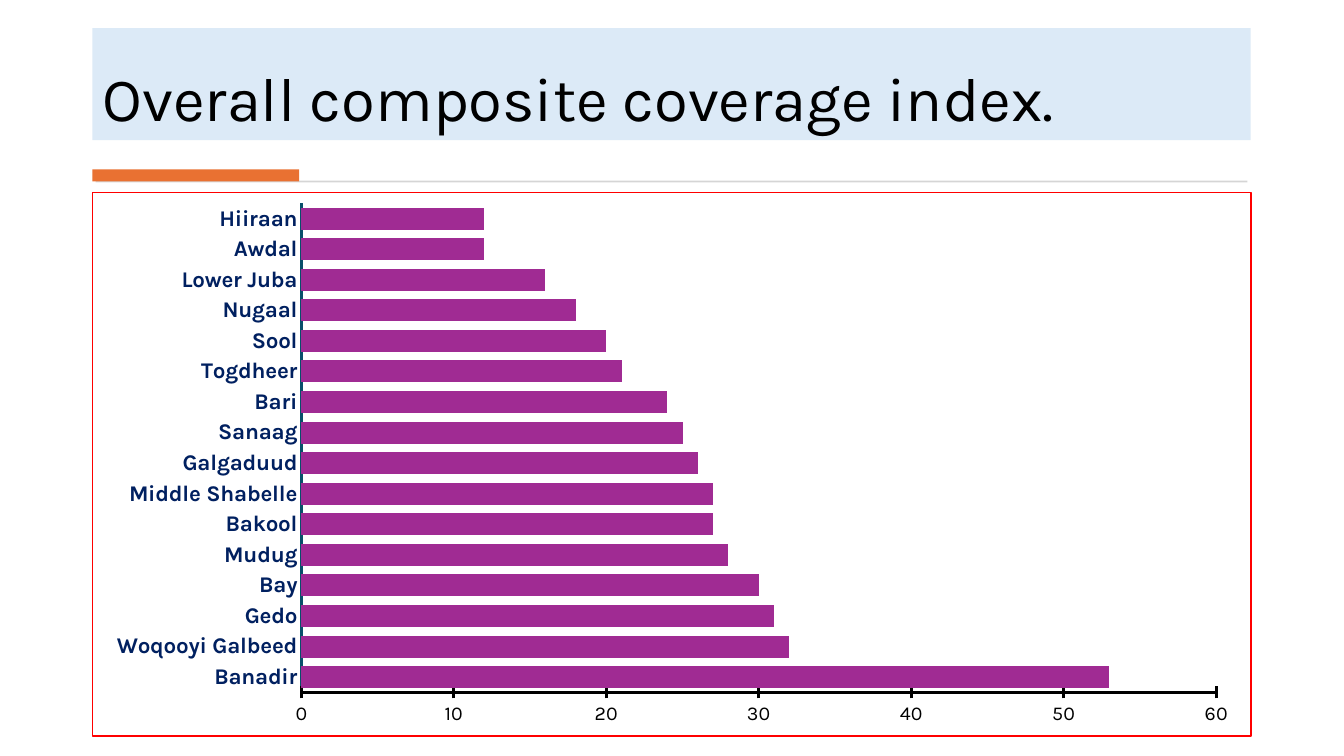
from dataclasses import dataclass

from lxml.etree import SubElement
from pptx import Presentation
from pptx.chart.data import CategoryChartData
from pptx.dml.color import RGBColor
from pptx.enum.chart import XL_CHART_TYPE, XL_TICK_MARK
from pptx.enum.shapes import MSO_SHAPE
from pptx.enum.text import MSO_ANCHOR, PP_ALIGN
from pptx.oxml import parse_xml
from pptx.oxml.ns import nsdecls, qn
from pptx.util import Cm, Pt

TITLE = "Overall composite coverage index."
COVERAGE = [
    ("Banadir", 53), ("Woqooyi Galbeed", 32), ("Gedo", 31), ("Bay", 30),
    ("Mudug", 28), ("Bakool", 27), ("Middle Shabelle", 27), ("Galgaduud", 26),
    ("Sanaag", 25), ("Bari", 24), ("Togdheer", 21), ("Sool", 20),
    ("Nugaal", 18), ("Lower Juba", 16), ("Awdal", 12), ("Hiiraan", 12),
]
AXIS_MAX, AXIS_STEP = 60, 10


@dataclass(frozen=True)
class Theme:
    font: str = "Karla"
    black: str = "000000"
    title_band: str = "DCEAF7"
    rule: str = "D5D5D5"
    accent: str = "E97132"
    bar: str = "A02B93"
    region: str = "002060"
    region_line: str = "084F6A"
    frame_fill: str = "FFFFFF"
    frame_line: str = "FF0000"
    title_size: int = 44
    region_size: int = 16
    scale_size: int = 14
    base_size: int = 10


THEME = Theme()
LEFT = 2.33
BOXES = {  # left, top, width, height in cm
    "title": (LEFT, 0.71, 29.19, 2.82),
    "rule": (2.41, 4.55, 29.03, 0.05),
    "accent": (LEFT, 4.27, 5.21, 0.3),
    "chart": (LEFT, 4.84, 29.21, 13.72),
}
PLOT = {"x": 0.18, "y": 0.02, "w": 0.79, "h": 0.9}  # shares of the chart


def box(part):
    return [Cm(length) for length in BOXES[part]]


def paint(fill, color):
    fill.solid()
    fill.fore_color.rgb = RGBColor.from_string(color)


def style_font(font, size, color, bold=False):
    font.name, font.size, font.bold = THEME.font, Pt(size), bold
    font.color.rgb = RGBColor.from_string(color)


def style_axis(axis, size, color, line_color, tick, bold=False):
    axis.has_major_gridlines = False
    axis.major_tick_mark, axis.minor_tick_mark = tick, XL_TICK_MARK.NONE
    style_font(axis.tick_labels.font, size, color, bold)
    axis.format.line.width = Pt(2)
    axis.format.line.color.rgb = RGBColor.from_string(line_color)


def add_title(slide):
    title = slide.shapes.title
    title.left, title.top, title.width, title.height = box("title")
    paint(title.fill, THEME.title_band)
    title.text_frame.vertical_anchor = MSO_ANCHOR.BOTTOM
    paragraph = title.text_frame.paragraphs[0]
    paragraph.alignment, paragraph.line_spacing = PP_ALIGN.LEFT, 0.9
    run = paragraph.add_run()
    run.text = TITLE
    style_font(run.font, THEME.title_size, THEME.black)


def add_strip(slide, part, color):
    strip = slide.shapes.add_shape(MSO_SHAPE.RECTANGLE, *box(part))
    strip.shadow.inherit = False
    paint(strip.fill, color)
    strip.line.fill.background()


def frame_chart(chart):
    """Fill and outline the chart area and fix the place of its plot."""
    chart_space = chart.element
    chart_space.find(qn("c:chart")).addnext(parse_xml(
        f'<c:spPr {nsdecls("c", "a")}>'
        f'<a:solidFill><a:srgbClr val="{THEME.frame_fill}"/></a:solidFill>'
        f'<a:ln w="{Pt(0.75)}"><a:solidFill><a:srgbClr val="{THEME.frame_line}"/>'
        '</a:solidFill></a:ln></c:spPr>'))
    plot_area = chart_space.find(".//" + qn("c:plotArea"))
    for layout in plot_area.findall(qn("c:layout")):
        plot_area.remove(layout)
    layout = parse_xml(f'<c:layout {nsdecls("c")}/>')
    plot_area.insert(0, layout)
    manual = SubElement(layout, qn("c:manualLayout"))
    settings = {"layoutTarget": "inner", "xMode": "edge", "yMode": "edge", **PLOT}
    for tag, value in settings.items():
        SubElement(manual, qn(f"c:{tag}")).set("val", str(value))


def add_coverage_chart(slide):
    coverage = CategoryChartData(number_format="0")
    regions, values = zip(*COVERAGE)
    coverage.categories = regions
    coverage.add_series("Series 1", values)
    chart = slide.shapes.add_chart(
        XL_CHART_TYPE.BAR_CLUSTERED, *box("chart"), coverage).chart
    chart.has_title = chart.has_legend = False
    style_font(chart.font, THEME.base_size, THEME.black)

    plot = chart.plots[0]
    plot.gap_width, plot.overlap, plot.vary_by_categories = 39, 98, False
    paint(plot.series[0].format.fill, THEME.bar)

    style_axis(chart.category_axis, THEME.region_size, THEME.region,
               THEME.region_line, XL_TICK_MARK.NONE, bold=True)
    scale = chart.value_axis
    style_axis(scale, THEME.scale_size, THEME.black, THEME.black, XL_TICK_MARK.CROSS)
    scale.minimum_scale, scale.maximum_scale = 0, AXIS_MAX
    scale.major_unit = AXIS_STEP
    frame_chart(chart)


def main():
    deck = Presentation()
    deck.slide_width, deck.slide_height = Cm(33.87), Cm(19.05)
    slide = deck.slides.add_slide(deck.slide_layouts.get_by_name("Title Only"))
    add_title(slide)
    add_strip(slide, "rule", THEME.rule)
    add_strip(slide, "accent", THEME.accent)
    add_coverage_chart(slide)
    deck.save("out.pptx")


if __name__ == "__main__":
    main()
